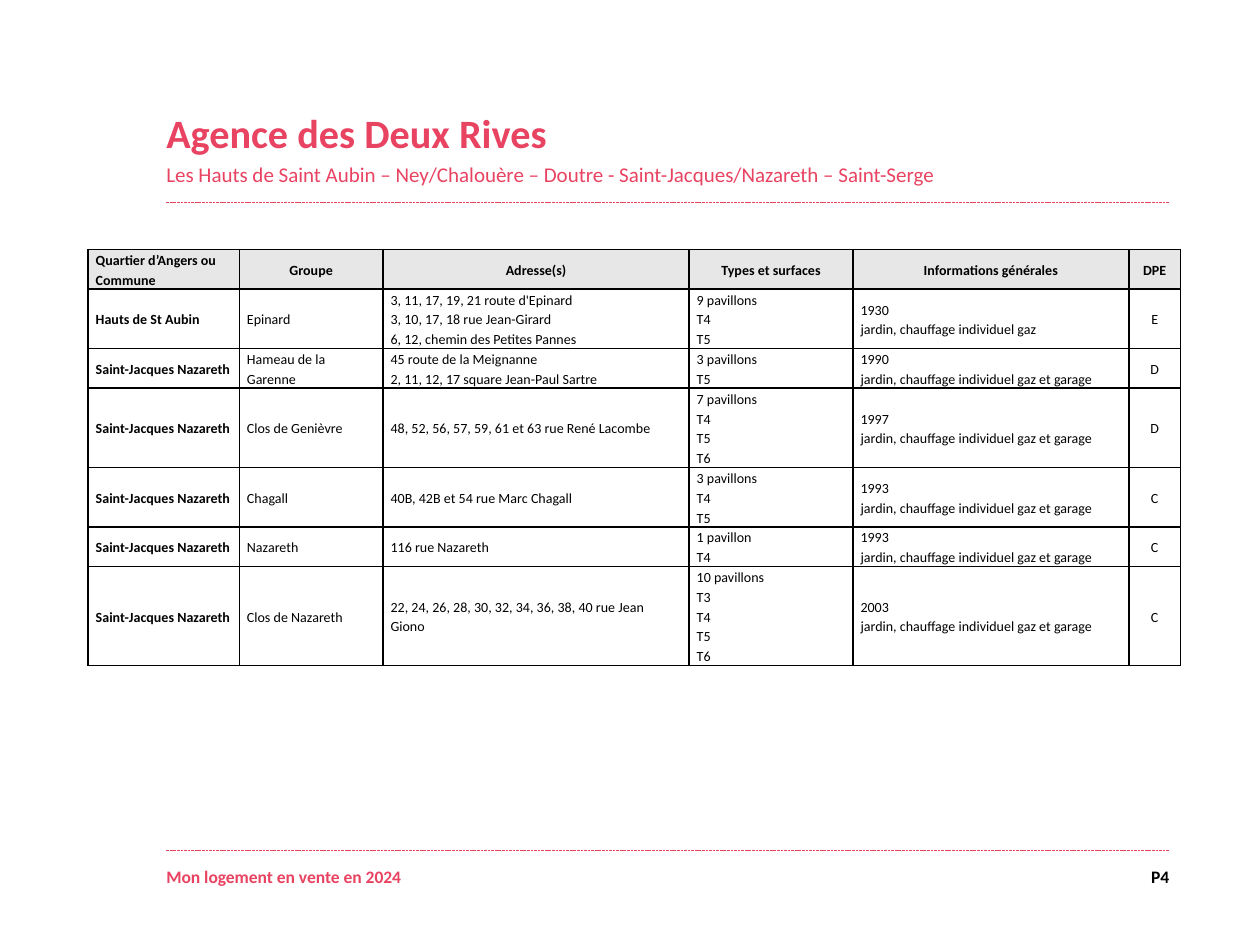
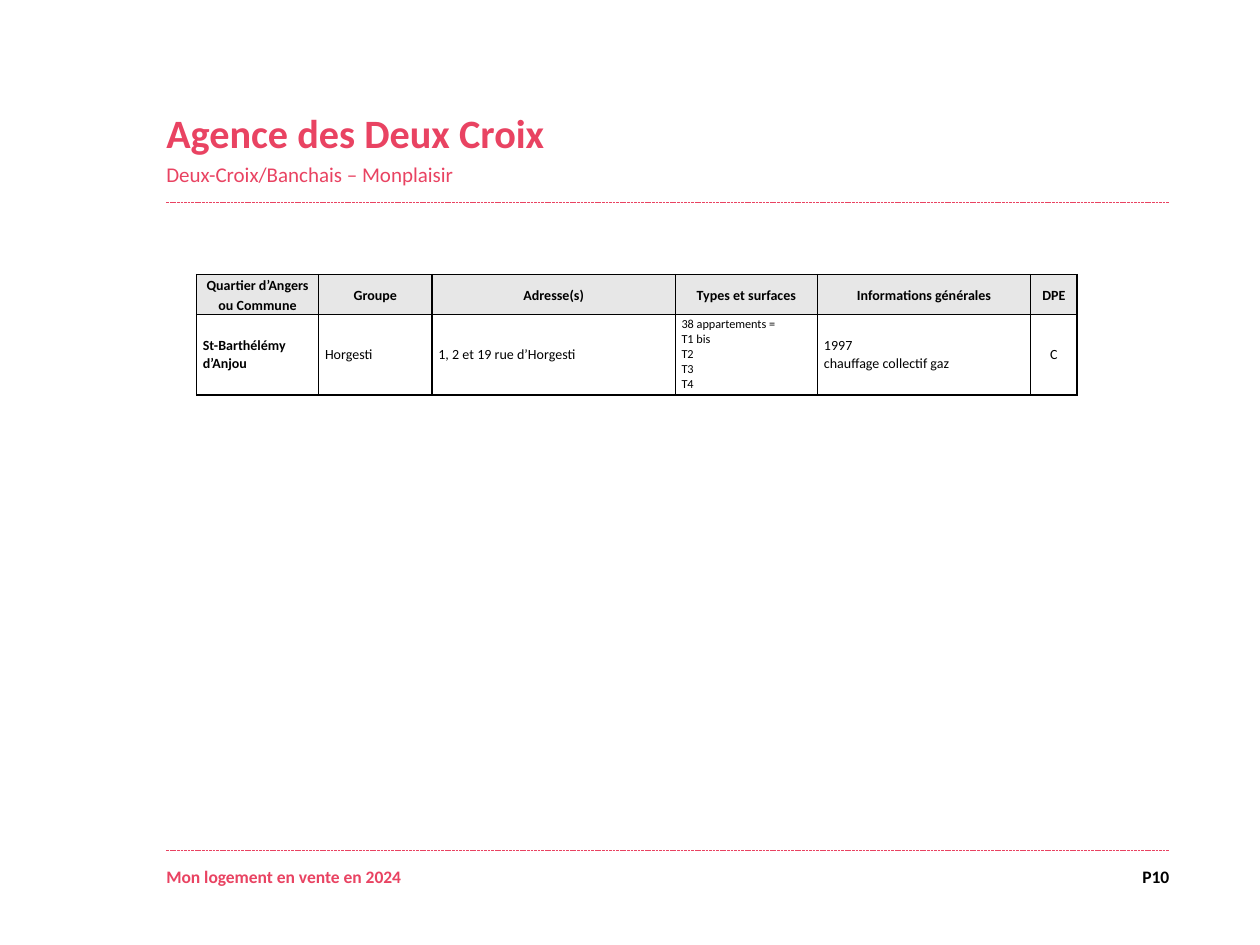
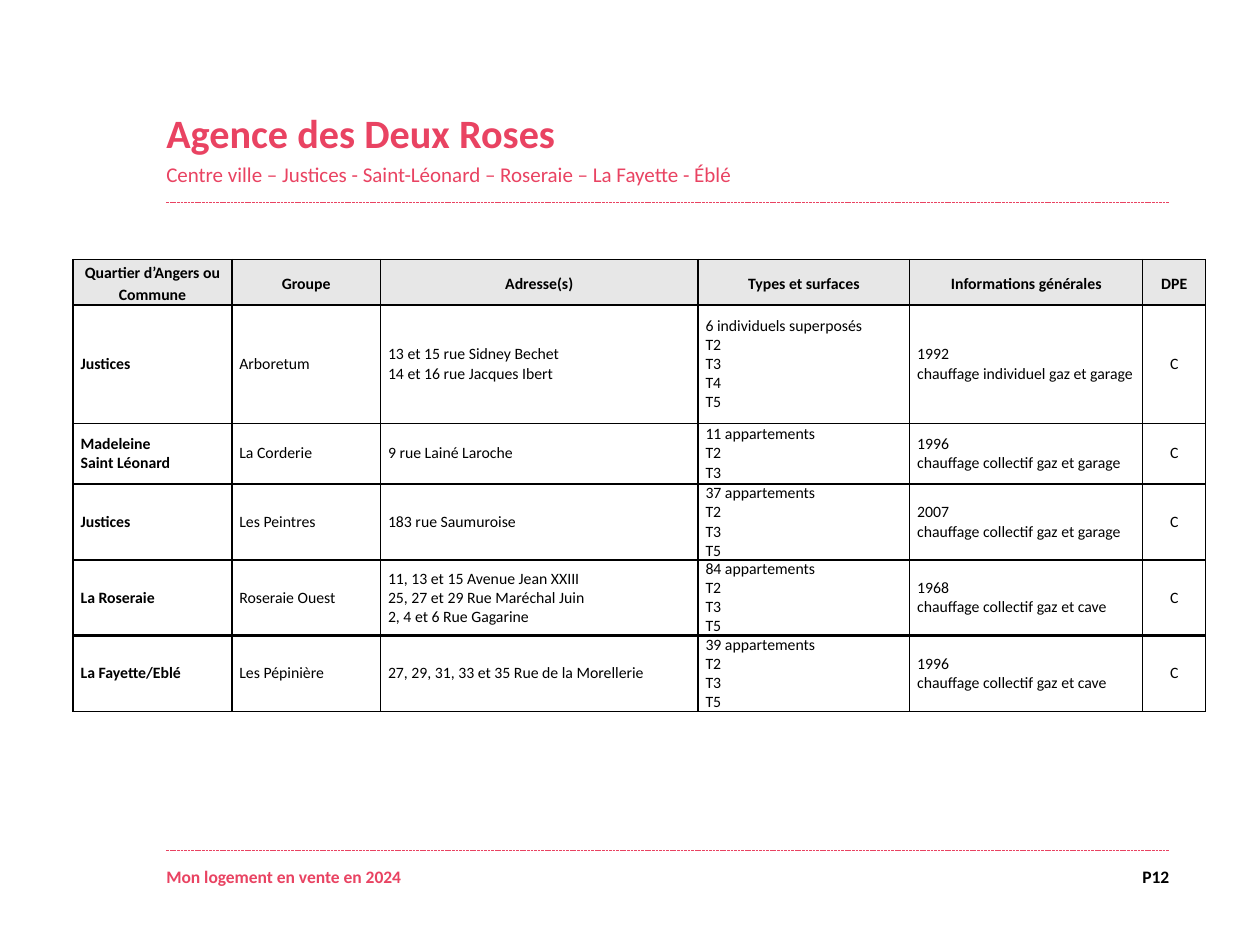
from dataclasses import dataclass

from lxml.etree import SubElement
from pptx import Presentation
from pptx.dml.color import RGBColor
from pptx.enum.dml import MSO_LINE
from pptx.enum.shapes import MSO_CONNECTOR
from pptx.enum.text import MSO_ANCHOR as Anchor, MSO_AUTO_SIZE as AutoSize, PP_ALIGN as Align
from pptx.oxml.ns import qn
from pptx.util import Inches, Pt


@dataclass(frozen=True)
class Theme:
    """Colours, font, type sizes and line widths of the slides."""
    accent: str = "E94362"
    ink: str = "000000"
    header_fill: str = "E7E7E7"
    font: str = "Calibri"
    title_size: int = 23
    subtitle_size: int = 12
    footer_size: int = 10
    rule_width: float = 0.5
    border_width: float = 1
    header_spacing: float = 1.15


THEME = Theme()
SLIDE_WIDTH, SLIDE_HEIGHT = Inches(10), Inches(7.5)
LEFT, RIGHT = 13.2, 92.8
FOOTER_TOP, FOOTER_HEIGHT = 91.6, 2.67
FOOTER = "Mon logement en vente en 2024"
HEADERS = ("Quartier d’Angers ou Commune", "Groupe", "Adresse(s)",
           "Types et surfaces", "Informations générales", "DPE")
NAZARETH = "Saint-Jacques Nazareth"
GARDEN = "jardin, chauffage individuel gaz"
GARDEN_GARAGE = f"{GARDEN} et garage"
SHARED_GARAGE = "chauffage collectif gaz et garage"
SHARED_CELLAR = "chauffage collectif gaz et cave"

DEUX_RIVES = [
    ("Hauts de St Aubin", "Epinard",
     "3, 11, 17, 19, 21 route d'Epinard\n3, 10, 17, 18 rue Jean-Girard\n"
     "6, 12, chemin des Petites Pannes",
     "9 pavillons\nT4\nT5", f"1930\n{GARDEN}", "E"),
    (NAZARETH, "Hameau de la Garenne",
     "45 route de la Meignanne\n2, 11, 12, 17 square Jean-Paul Sartre",
     "3 pavillons\nT5", f"1990\n{GARDEN_GARAGE}", "D"),
    (NAZARETH, "Clos de Genièvre", "48, 52, 56, 57, 59, 61 et 63 rue René Lacombe",
     "7 pavillons\nT4\nT5\nT6", f"1997\n{GARDEN_GARAGE}", "D"),
    (NAZARETH, "Chagall", "40B, 42B et 54 rue Marc Chagall",
     "3 pavillons\nT4\nT5", f"1993\n{GARDEN_GARAGE}", "C"),
    (NAZARETH, "Nazareth", "116 rue Nazareth",
     "1 pavillon\nT4", f"1993\n{GARDEN_GARAGE}", "C"),
    (NAZARETH, "Clos de Nazareth", "22, 24, 26, 28, 30, 32, 34, 36, 38, 40 rue Jean Giono",
     "10 pavillons\nT3\nT4\nT5\nT6", f"2003\n{GARDEN_GARAGE}", "C"),
]
DEUX_CROIX = [
    ("St-Barthélémy d’Anjou", "Horgesti", "1, 2 et 19 rue d’Horgesti",
     "38 appartements =\nT1 bis\nT2\nT3\nT4", "1997\nchauffage collectif gaz", "C"),
]
DEUX_ROSES = [
    ("Justices", "Arboretum", "13 et 15 rue Sidney Bechet\n14 et 16 rue Jacques Ibert",
     "6 individuels superposés\nT2\nT3\nT4\nT5",
     "1992\nchauffage individuel gaz et garage", "C"),
    ("Madeleine\nSaint Léonard", "La Corderie", "9 rue Lainé Laroche",
     "11 appartements\nT2\nT3", f"1996\n{SHARED_GARAGE}", "C"),
    ("Justices", "Les Peintres", "183 rue Saumuroise",
     "37 appartements\nT2\nT3\nT5", f"2007\n{SHARED_GARAGE}", "C"),
]
ROSERAIE = [
    ("La Roseraie", "Roseraie Ouest",
     "11, 13 et 15 Avenue Jean XXIII\n25, 27 et 29 Rue Maréchal Juin\n2, 4 et 6 Rue Gagarine",
     "84 appartements\nT2\nT3\nT5", f"1968\n{SHARED_CELLAR}", "C"),
]
LA_FAYETTE = [
    ("La Fayette/Eblé", "Les Pépinière", "27, 29, 31, 33 et 35 Rue de la Morellerie",
     "39 appartements\nT2\nT3\nT5", f"1996\n{SHARED_CELLAR}", "C"),
]


def across(percent):
    """Return a share of the slide's width."""
    return int(SLIDE_WIDTH * percent / 100)


def down(percent):
    """Return a share of the slide's height."""
    return int(SLIDE_HEIGHT * percent / 100)


def write(frame, text, *, size, color=THEME.ink, bold=False, align=Align.LEFT,
          spacing=1.0, before=0):
    """Add each line of text to the frame as a formatted paragraph."""
    for line in text.split("\n"):
        paragraph = frame.add_paragraph() if frame.text else frame.paragraphs[0]
        paragraph.alignment = align
        paragraph.line_spacing = spacing
        paragraph.space_before = Pt(before)
        run = paragraph.add_run()
        run.text = line
        run.font.name = THEME.font
        run.font.size = Pt(size)
        run.font.bold = bold
        run.font.color.rgb = RGBColor.from_string(color)


def prepare_frame(frame, anchor=Anchor.TOP):
    """Make a text frame wrap, without margins or resizing."""
    frame.word_wrap = True
    frame.auto_size = AutoSize.NONE
    frame.vertical_anchor = anchor
    frame.margin_left = frame.margin_right = frame.margin_top = frame.margin_bottom = 0


def add_rule(slide, top):
    """Draw a dashed rule between the side margins."""
    rule = slide.shapes.add_connector(
        MSO_CONNECTOR.STRAIGHT, across(LEFT), down(top), across(RIGHT), down(top))
    rule.line.color.rgb = RGBColor.from_string(THEME.accent)
    rule.line.width = Pt(THEME.rule_width)
    rule.line.dash_style = MSO_LINE.SQUARE_DOT
    SubElement(rule.element.spPr, qn("a:effectLst"))


def add_footer_text(slide, text, left, right, **text_format):
    """Write one bold text on the footer row."""
    box = slide.shapes.add_textbox(
        across(left), down(FOOTER_TOP), across(right - left), down(FOOTER_HEIGHT))
    prepare_frame(box.text_frame)
    write(box.text_frame, text, size=THEME.footer_size, bold=True, **text_format)


def add_agency_slide(presentation, agency, districts, page):
    """Add a slide with its title, subtitle, rules and footer."""
    slide = presentation.slides.add_slide(presentation.slide_layouts.get_by_name("Title Only"))
    title = slide.shapes.title
    title.left, title.top = across(LEFT), down(9.73)
    title.width, title.height = across(62.4), down(10)
    prepare_frame(title.text_frame, Anchor.BOTTOM)
    write(title.text_frame, agency, size=THEME.title_size, color=THEME.accent, bold=True)
    write(title.text_frame, districts, size=THEME.subtitle_size, color=THEME.accent,
          before=THEME.subtitle_size * 0.2)
    add_rule(slide, 21.47)
    add_rule(slide, 90)
    page_left = 89.4
    add_footer_text(slide, FOOTER, LEFT, page_left, color=THEME.accent)
    add_footer_text(slide, f"P{page}", page_left, RIGHT, align=Align.RIGHT)
    return slide


def add_borders(cell):
    """Outline the four sides of a cell."""
    properties = cell._tc.get_or_add_tcPr()
    for side in ("lnL", "lnR", "lnT", "lnB"):
        line = SubElement(properties, qn(f"a:{side}"), w=str(Pt(THEME.border_width)))
        fill = SubElement(line, qn("a:solidFill"))
        SubElement(fill, qn("a:srgbClr"), val=THEME.ink)


def fill_cell(cell, text, margin, is_header, **text_format):
    """Format one table cell and write its text."""
    add_borders(cell)
    if is_header:
        cell.fill.solid()
        cell.fill.fore_color.rgb = RGBColor.from_string(THEME.header_fill)
    else:
        cell.fill.background()
    cell.vertical_anchor = Anchor.MIDDLE
    cell.margin_left = cell.margin_right = Inches(margin)
    cell.margin_top = cell.margin_bottom = 0
    write(cell.text_frame, text, **text_format)


def add_housing_table(slide, housing, left, top, widths, heights, *, size, types_size=None,
                      spacing=1.0, margin=0.06, header=True, first_header=Align.CENTER):
    """Add a table of homes for sale, with or without its header row."""
    rows = [HEADERS, *housing] if header else housing
    table = slide.shapes.add_table(
        len(rows), len(widths), across(left), down(top),
        across(sum(widths)), down(sum(heights))).table
    table.first_row = table.horz_banding = False
    for column, width in zip(table.columns, widths):
        column.width = across(width)
    for row, height in zip(table.rows, heights):
        row.height = down(height)
    last = len(widths) - 1
    for row_index, texts in enumerate(rows):
        is_header = header and row_index == 0
        for column_index, text in enumerate(texts):
            align = Align.CENTER if is_header or column_index == last else Align.LEFT
            if is_header and column_index == 0:
                align = first_header
            is_types = column_index == 3 and not is_header
            fill_cell(table.cell(row_index, column_index), text, margin, is_header,
                      size=types_size if is_types and types_size else size,
                      bold=is_header or column_index == 0, align=align,
                      spacing=THEME.header_spacing if is_header else spacing)


def main():
    """Build the three agency slides and save them."""
    presentation = Presentation()
    presentation.slide_width, presentation.slide_height = SLIDE_WIDTH, SLIDE_HEIGHT

    slide = add_agency_slide(
        presentation, "Agence des Deux Rives",
        "Les Hauts de Saint Aubin – Ney/Chalouère – Doutre - Saint-Jacques/Nazareth – Saint-Serge",
        4)
    add_housing_table(slide, DEUX_RIVES, 7, 26.4, (12, 11.4, 24.3, 13, 21.9, 4.1),
                      (4.13, 6.13, 4.13, 8.27, 6.13, 4.13, 10.27), size=8,
                      spacing=THEME.header_spacing, first_header=Align.LEFT)

    slide = add_agency_slide(
        presentation, "Agence des Deux Croix", "Deux-Croix/Banchais – Monplaisir", 10)
    add_housing_table(slide, DEUX_CROIX, 15.6, 29.07, (9.7, 9, 19.3, 11.3, 16.9, 3.7),
                      (4.13, 8.53), size=8, types_size=7, margin=0.05)

    slide = add_agency_slide(
        presentation, "Agence des Deux Roses",
        "Centre ville – Justices - Saint-Léonard – Roseraie – La Fayette - Éblé", 12)
    top = 27.47
    for housing, heights in ((DEUX_ROSES, (4.8, 12.53, 6.4, 8)),
                             (ROSERAIE, (8,)), (LA_FAYETTE, (8,))):
        add_housing_table(slide, housing, 5.8, top, (12.6, 11.8, 25.2, 16.8, 18.5, 5),
                          heights, size=9, header=housing is DEUX_ROSES)
        top += sum(heights)

    presentation.save("out.pptx")


if __name__ == "__main__":
    main()
